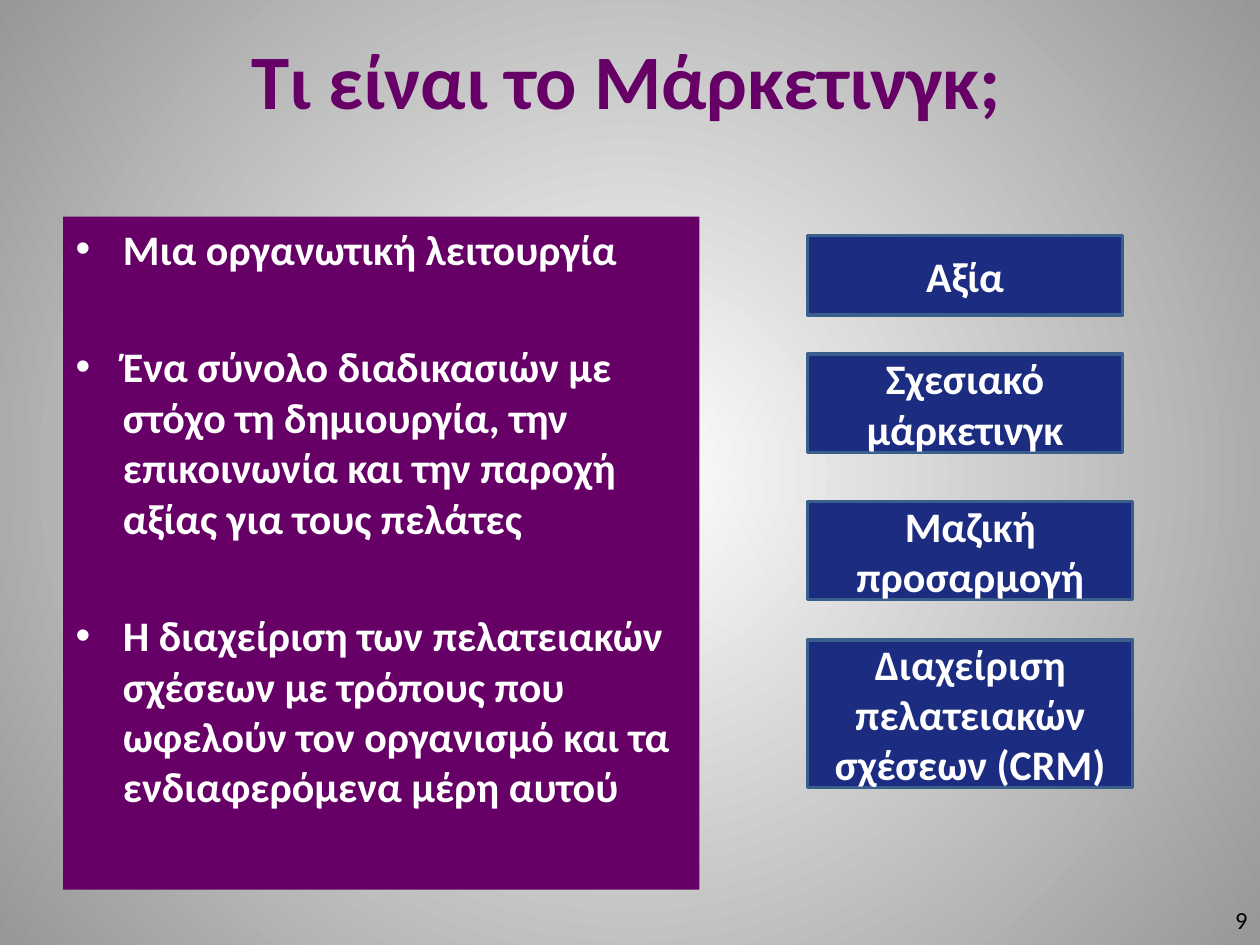
import pptx
import pptx.util
import pptx.dml.color
import pptx.enum.shapes
import pptx.enum.text
import pptx.oxml
import pptx.oxml.ns

Inches, Pt = pptx.util.Inches, pptx.util.Pt
ALIGN = pptx.enum.text.PP_ALIGN
ANCHOR = pptx.enum.text.MSO_ANCHOR

COLORS = {
    "purple": "660066",
    "navy": "1B2C81",
    "border": "3A5F8C",
    "white": "FFFFFF",
    "gray": "979797",
    "black": "000000",
}

POINTS = [
    "Μια οργανωτική λειτουργία",
    "Ένα σύνολο διαδικασιών με στόχο τη δημιουργία, την επικοινωνία και την παροχή αξίας για τους πελάτες",
    "Η διαχείριση των πελατειακών σχέσεων με τρόπους που ωφελούν τον οργανισμό και τα ενδιαφερόμενα μέρη αυτού",
]

CONCEPTS = [
    ("Αξία", 1.87, 2.5, 0.63),
    ("Σχεσιακό μάρκετινγκ", 2.81, 2.5, 0.78),
    ("Μαζική προσαρμογή", 3.98, 2.58, 0.78),
    ("Διαχείριση πελατειακών σχέσεων (CRM)", 5.08, 2.58, 1.17),
]


def rgb(name):
    return pptx.dml.color.RGBColor.from_string(COLORS[name])


def fill_solid(sp, color):
    sp.fill.solid()
    sp.fill.fore_color.rgb = rgb(color)


def place(sp, left, top, width, height):
    sp.left, sp.top = Inches(left), Inches(top)
    sp.width, sp.height = Inches(width), Inches(height)


def format_paragraph(p, size, color, bold=True, align=None):
    p.alignment = align
    p.font.name = "Calibri"
    p.font.size = Pt(size)
    p.font.bold = bold
    p.font.color.rgb = rgb(color)


def set_text(sp, text, size, color, bold=True, align=ALIGN.CENTER):
    tf = sp.text_frame
    tf.word_wrap = True
    tf.auto_size = pptx.enum.text.MSO_AUTO_SIZE.NONE
    tf.vertical_anchor = ANCHOR.MIDDLE
    tf.text = text
    format_paragraph(tf.paragraphs[0], size, color, bold, align)


def set_background(s):
    fill = s.background.fill
    fill.gradient()
    for stop, color, position in zip(fill.gradient_stops, ("white", "gray"), (0, 1)):
        stop.color.rgb = rgb(color)
        stop.position = position
    lin = next(s.element.iter(pptx.oxml.ns.qn("a:lin")))
    radial = pptx.oxml.parse_xml(
        f'<a:path {pptx.oxml.ns.nsdecls("a")} path="circle">'
        '<a:fillToRect l="50000" t="50000" r="50000" b="50000"/></a:path>'
    )
    lin.getparent().replace(lin, radial)


def add_title(s):
    sp = s.shapes.title
    place(sp, 0.47, 0, 9, 1.25)
    set_text(sp, "Τι είναι το Μάρκετινγκ;", 44, "purple")


def add_points(s):
    sp = s.placeholders[1]
    place(sp, 0.5, 1.72, 5.05, 5.34)
    fill_solid(sp, "purple")
    tf = sp.text_frame
    tf.auto_size = pptx.enum.text.MSO_AUTO_SIZE.NONE
    tf.text = "\n".join(POINTS)
    for i, p in enumerate(tf.paragraphs):
        format_paragraph(p, 24, "white")
        if i:
            p.space_before = Pt(38.5)


def add_concept(s, text, top, width, height):
    sp = s.shapes.add_shape(
        pptx.enum.shapes.MSO_SHAPE.RECTANGLE,
        Inches(6.41), Inches(top), Inches(width), Inches(height),
    )
    sp.shadow.inherit = False
    fill_solid(sp, "navy")
    sp.line.color.rgb = rgb("border")
    sp.line.width = Pt(2)
    set_text(sp, text, 24, "white")


def add_page_number(s):
    sp = s.shapes.add_textbox(Inches(7.67), Inches(7.1), Inches(2.33), Inches(0.4))
    set_text(sp, "9", 14, "black", bold=False, align=ALIGN.RIGHT)


def main():
    prs = pptx.Presentation()
    prs.slide_width, prs.slide_height = Inches(10), Inches(7.5)
    s = prs.slides.add_slide(prs.slide_layouts[1])
    set_background(s)
    add_title(s)
    add_points(s)
    add_page_number(s)
    for concept in CONCEPTS:
        add_concept(s, *concept)
    prs.save("out.pptx")


main()
